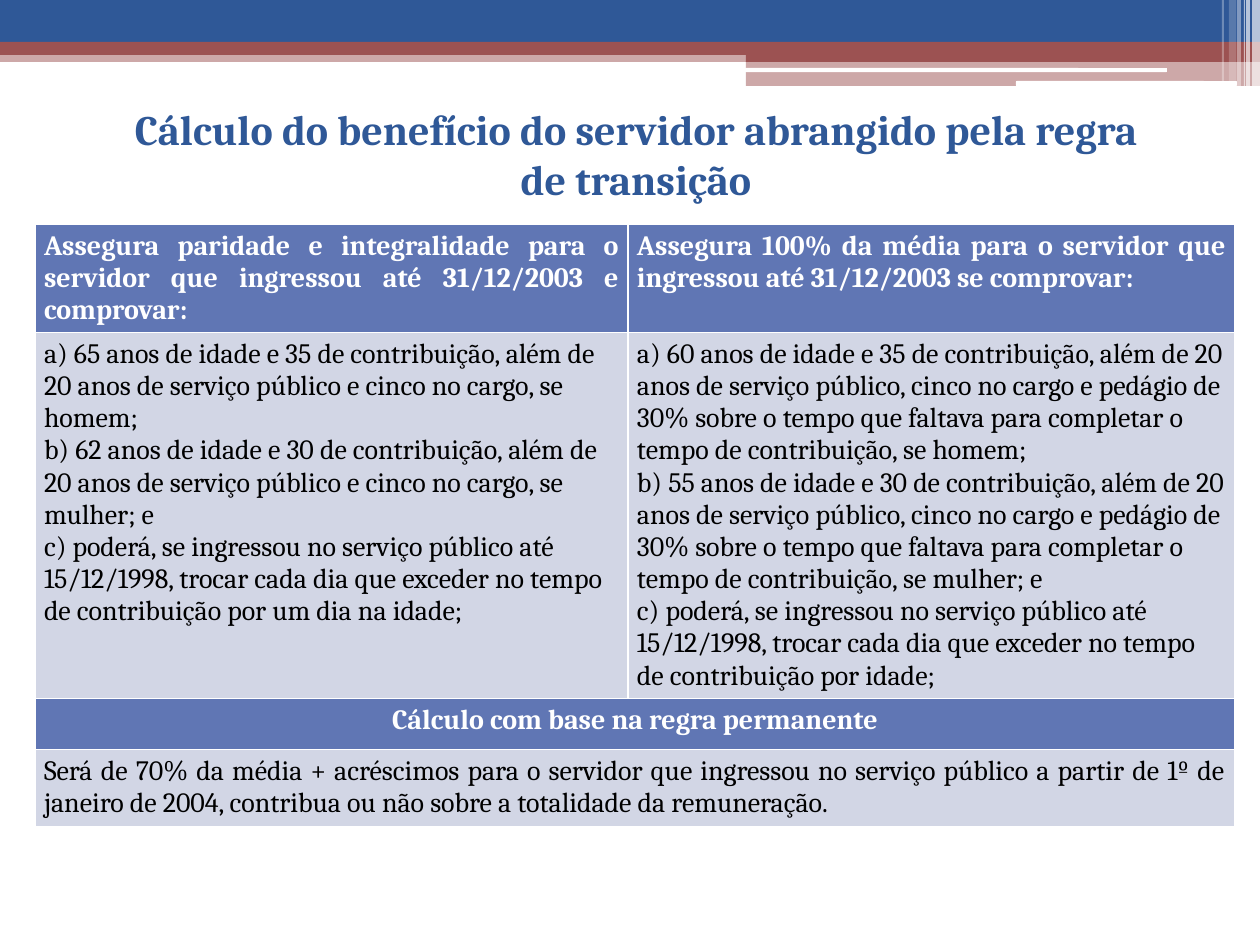
"""Build the slide on benefit calculation under the transition rule."""
from lxml.etree import SubElement
from pptx import Presentation
from pptx.dml.color import RGBColor
from pptx.enum.shapes import MSO_SHAPE as SHAPE
from pptx.enum.text import MSO_ANCHOR as ANCHOR, MSO_AUTO_SIZE as AUTO, PP_ALIGN as AL
from pptx.oxml.ns import qn
from pptx.util import Pt

THEME = dict(font="Cambria", title_size=24, body_size=16, blue="2F5897", red="9C5252",
             white="FFFFFF", black="000000", head="6076B4", body="D2D6E5")
PX = 914400 / 126

TITLE = "Cálculo do benefício do servidor abrangido pela regra de transição"
TITLE_BOX = (95, 96, 1082, 115)

BANDS = [
    (0, 50, 1260, 12, "red", 50),
    (0, 0, 1260, 43, "blue", 100),
    (0, 42, 1260, 13, "red", 100),
    (746, 49, 514, 13, "red", 100),
    (746, 61, 514, 25, "red", 50),
]
PILLS = [
    (745, 68, 422, 4, "white", 100),
    (1016, 81, 221, 5, "white", 100),
]
STRIPES = [
    (1252, 0, 8, 86, "white", 65),
    (1246, 0, 4, 86, "white", 65),
    (1244, 0, 1, 86, "white", 60),
    (1237, 0, 4, 86, "white", 40),
    (1229, 0, 7, 81, "white", 20),
    (1222, 0, 2, 81, "white", 30),
]

TABLE_AT = (35, 224)
COLS = (593, 607)
ROWS = [
    dict(height=108, head=True, align=AL.JUSTIFY, cells=[
        ["Assegura paridade e integralidade para o servidor que ingressou até 31/12/2003 e comprovar:"],
        ["Assegura 100% da média para o servidor que ingressou até 31/12/2003 se comprovar:"]]),
    dict(height=366, head=False, align=AL.LEFT, cells=[
        ["a) 65 anos de idade e 35 de contribuição, além de 20 anos de serviço público "
         "e cinco no cargo, se homem;",
         "b) 62 anos de idade e 30 de contribuição, além de 20 anos de serviço público "
         "e cinco no cargo, se mulher; e",
         "c) poderá, se ingressou no serviço público até 15/12/1998, trocar cada dia que "
         "exceder no tempo de contribuição por um dia na idade;"],
        ["a) 60 anos de idade e 35 de contribuição, além de 20 anos de serviço público, "
         "cinco no cargo e pedágio de 30% sobre o tempo que faltava para completar o "
         "tempo de contribuição, se homem;",
         "b) 55 anos de idade e 30 de contribuição, além de 20 anos de serviço público, "
         "cinco no cargo e pedágio de 30% sobre o tempo que faltava para completar o "
         "tempo de contribuição, se mulher; e",
         "c) poderá, se ingressou no serviço público até 15/12/1998, trocar cada dia que "
         "exceder no tempo de contribuição por idade;"]]),
    dict(height=51, head=True, align=AL.CENTER, cells=[
        ["Cálculo com base na regra permanente"]]),
    dict(height=77, head=False, align=AL.JUSTIFY, cells=[
        ["Será de 70% da média + acréscimos para o servidor que ingressou no serviço público "
         "a partir de 1º de janeiro de 2004, contribua ou não sobre a totalidade da remuneração."]]),
]


def px(*values):
    return [round(v * PX) for v in values]


def color(name):
    return RGBColor.from_string(THEME[name])


def write(tf, lines, size, ink, bold, align):
    tf.text = "\n".join(lines)
    for p in tf.paragraphs:
        p.alignment = align
        for r in p.runs:
            r.font.name, r.font.size, r.font.bold = THEME["font"], Pt(THEME[size]), bold
            r.font.color.rgb = color(ink)


def add_bar(s, kind, x, y, w, h, fill, opacity):
    sp = s.shapes.add_shape(kind, *px(x, y, w, h))
    sp.shadow.inherit = False
    sp.line.fill.background()
    sp.fill.solid()
    sp.fill.fore_color.rgb = color(fill)
    if opacity < 100:
        rgb = sp.fill._xPr.find(".//" + qn("a:srgbClr"))
        SubElement(rgb, qn("a:alpha"), val=str(opacity * 1000))


def add_title(s):
    title = s.shapes.title
    title.left, title.top, title.width, title.height = px(*TITLE_BOX)
    tf = title.text_frame
    tf.auto_size, tf.word_wrap, tf.vertical_anchor = AUTO.NONE, True, ANCHOR.MIDDLE
    write(tf, [TITLE], "title_size", "blue", True, AL.CENTER)


def add_rules_table(s):
    size = (sum(COLS), sum(row["height"] for row in ROWS))
    table = s.shapes.add_table(len(ROWS), len(COLS), *px(*TABLE_AT, *size)).table
    for col, width in zip(table.columns, px(*COLS)):
        col.width = width
    for i, row in enumerate(ROWS):
        table.rows[i].height = px(row["height"])[0]
        if len(row["cells"]) == 1:
            table.cell(i, 0).merge(table.cell(i, len(COLS) - 1))
        for j, lines in enumerate(row["cells"]):
            cell = table.cell(i, j)
            cell.margin_left, cell.margin_right, cell.margin_top, cell.margin_bottom = px(9, 9, 6, 6)
            cell.fill.solid()
            cell.fill.fore_color.rgb = color("head" if row["head"] else "body")
            ink = "white" if row["head"] else "black"
            write(cell.text_frame, lines, "body_size", ink, row["head"], row["align"])


def main():
    prs = Presentation()
    prs.slide_width, prs.slide_height = px(1260, 945)
    s = prs.slides.add_slide(prs.slide_layouts[5])
    for kind, bars in ((SHAPE.RECTANGLE, BANDS), (SHAPE.ROUNDED_RECTANGLE, PILLS),
                       (SHAPE.RECTANGLE, STRIPES)):
        for bar in bars:
            add_bar(s, kind, *bar)
    add_title(s)
    add_rules_table(s)
    prs.save("out.pptx")


if __name__ == "__main__":
    main()
